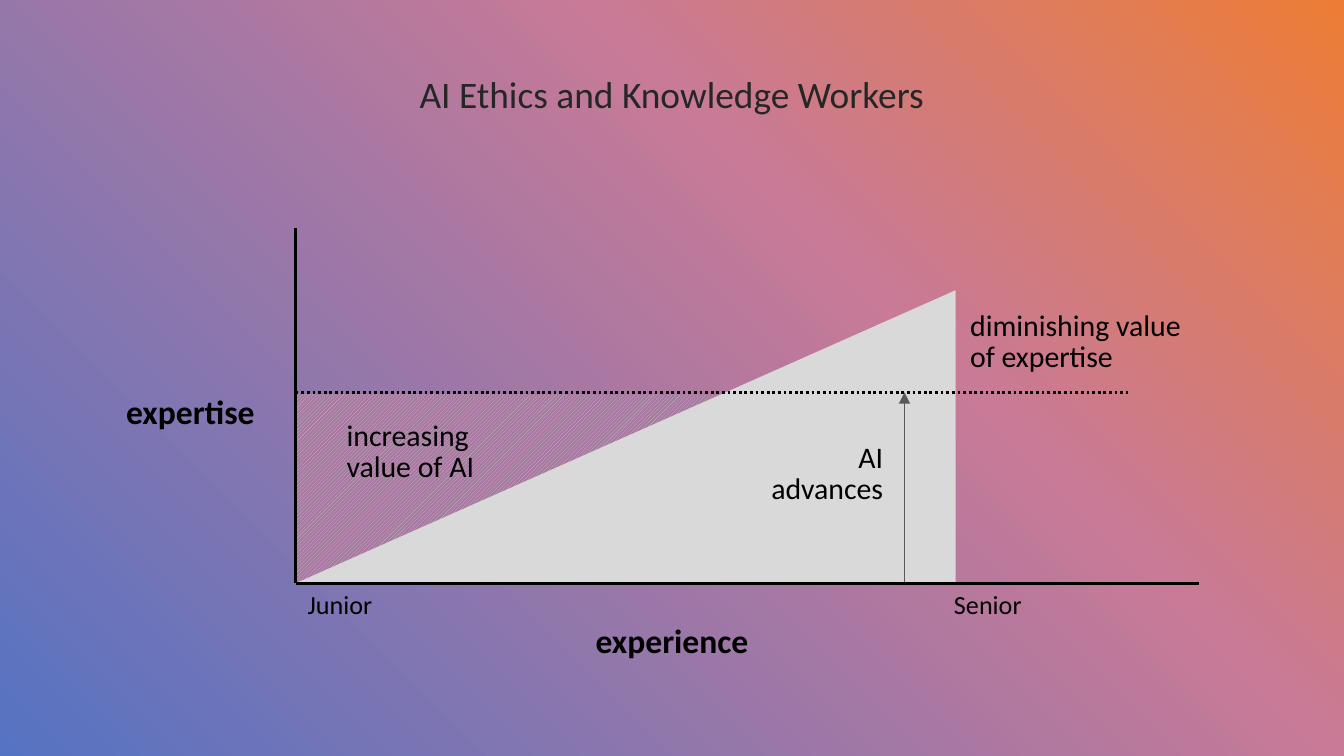
"""Build a slide showing how AI advances shift the value of expertise."""
import pptx
import pptx.util
import pptx.dml.color
import pptx.enum.dml
import pptx.enum.shapes
import pptx.enum.text
import pptx.oxml
import pptx.oxml.ns

Inches, Pt = pptx.util.Inches, pptx.util.Pt
RGBColor = pptx.dml.color.RGBColor
ALIGN = pptx.enum.text.PP_ALIGN
DASH = pptx.enum.dml.MSO_LINE.ROUND_DOT
NS = pptx.oxml.ns.nsdecls("a", "p")

BLACK = RGBColor(0x00, 0x00, 0x00)
TITLE = RGBColor(0x26, 0x26, 0x26)
ARROW = RGBColor(0x59, 0x59, 0x59)
GREY = RGBColor(0xD9, 0xD9, 0xD9)
HATCH = RGBColor(0xBF, 0xBF, 0xBF)
MAUVE = RGBColor(0xA9, 0x78, 0xA2)
BLUE = RGBColor(0x55, 0x73, 0xC3)
PINK = RGBColor(0xC8, 0x7A, 0x96)
ORANGE = RGBColor(0xED, 0x7D, 0x36)

STOPS = [(0, BLUE), (64, PINK), (100, ORANGE)]
LEFT, BASE, LEVEL = 2.2, 4.34, 2.92
PEAK_X, PEAK_Y = 7.11, 2.16
ARROW_X = 6.73
HATCH_POINTS = [(LEFT, 2.93), (6, 2.94), (2.81, 4.33), (LEFT, 4.33)]

LINES = [
    ((LEFT, 1.7), (LEFT, BASE), BLACK, 1.5, None, False),
    ((LEFT, LEVEL), (8.39, LEVEL), BLACK, 1.5, DASH, False),
    ((ARROW_X, BASE), (ARROW_X, LEVEL), ARROW, 1, None, True),
    ((LEFT, BASE), (8.92, BASE), BLACK, 1.5, None, False),
]

HEADING = {"size": Pt(20), "bold": False}
AXIS = {"size": Pt(18), "bold": True}
NOTE = {"size": Pt(16), "bold": False}
TICK = {"size": Pt(14), "bold": False}
TIGHT = Pt(16.6)

TEXTS = [
    (["AI Ethics and Knowledge Workers"], (0, 0.48, 10, 0.44), HEADING, TITLE, ALIGN.CENTER, None),
    (["increasing", "value of AI"], (2.48, 3.09, 1.35, 0.58), NOTE, BLACK, ALIGN.LEFT, TIGHT),
    (["diminishing value of expertise"], (7.12, 2.27, 1.88, 0.58), NOTE, BLACK, ALIGN.LEFT, TIGHT),
    (["expertise"], (0.84, 2.93, 1.2, 0.35), AXIS, BLACK, ALIGN.LEFT, TIGHT),
    (["experience"], (4.29, 4.63, 1.42, 0.35), AXIS, BLACK, ALIGN.CENTER, TIGHT),
    (["Junior"], (2.19, 4.33, 1.2, 0.33), TICK, BLACK, ALIGN.LEFT, TIGHT),
    (["Senior"], (7, 4.33, 1.2, 0.33), TICK, BLACK, ALIGN.LEFT, TIGHT),
    (["AI advances"], (5.61, 3.25, 1.06, 0.58), NOTE, BLACK, ALIGN.RIGHT, TIGHT),
]


def set_background(s):
    stops = "".join(
        f'<a:gs pos="{pos * 1000}"><a:srgbClr val="{color}"/></a:gs>' for pos, color in STOPS
    )
    s._element.cSld.insert(0, pptx.oxml.parse_xml(
        f'<p:bg {NS}><p:bgPr><a:gradFill rotWithShape="1"><a:gsLst>{stops}</a:gsLst>'
        '<a:path path="circle"><a:fillToRect t="100000" r="100000"/></a:path>'
        '</a:gradFill><a:effectLst/></p:bgPr></p:bg>'))


def add_hatch(s):
    points = [(Inches(x), Inches(y)) for x, y in HATCH_POINTS]
    builder = s.shapes.build_freeform(*points[0])
    builder.add_line_segments(points[1:], close=True)
    sp = builder.convert_to_shape()
    sp.shadow.inherit = False
    sp.line.fill.background()
    sp.fill.patterned()
    sp.fill.pattern = pptx.enum.dml.MSO_PATTERN.DARK_UPWARD_DIAGONAL
    sp.fill.fore_color.rgb = HATCH
    sp.fill.back_color.rgb = MAUVE


def add_triangle(s):
    box = (LEFT, PEAK_Y, PEAK_X - LEFT, BASE - PEAK_Y)
    sp = s.shapes.add_shape(pptx.enum.shapes.MSO_SHAPE.RIGHT_TRIANGLE, *map(Inches, box))
    sp.shadow.inherit = False
    sp.fill.solid()
    sp.fill.fore_color.rgb = GREY
    sp.line.fill.background()
    sp._element.spPr.xfrm.set("flipH", "1")


def add_line(s, start, end, color, width, dash, arrow):
    cx = s.shapes.add_connector(
        pptx.enum.shapes.MSO_CONNECTOR.STRAIGHT, *map(Inches, start + end))
    cx.line.color.rgb = color
    cx.line.width = Pt(width)
    if dash:
        cx.line.dash_style = dash
    if arrow:
        cx.line._get_or_add_ln().append(
            pptx.oxml.parse_xml(f'<a:tailEnd {NS} type="triangle"/>'))
    cx._element.spPr.append(pptx.oxml.parse_xml(f"<a:effectLst {NS}/>"))


def add_text(s, lines, box, style, color, align, spacing):
    tf = s.shapes.add_textbox(*map(Inches, box)).text_frame
    tf.word_wrap = True
    tf.auto_size = pptx.enum.text.MSO_AUTO_SIZE.SHAPE_TO_FIT_TEXT
    for i, line in enumerate(lines):
        p = tf.add_paragraph() if i else tf.paragraphs[0]
        p.alignment = align
        p.line_spacing = spacing
        r = p.add_run()
        r.text = line
        for name, value in {"name": "Calibri", **style}.items():
            setattr(r.font, name, value)
        r.font.color.rgb = color


def main():
    prs = pptx.Presentation()
    prs.slide_width = Inches(10)
    prs.slide_height = prs.slide_width * 9 // 16
    s = prs.slides.add_slide(prs.slide_layouts[6])
    set_background(s)
    add_hatch(s)
    add_triangle(s)
    for line in LINES:
        add_line(s, *line)
    for text in TEXTS:
        add_text(s, *text)
    prs.save("out.pptx")


if __name__ == "__main__":
    main()
